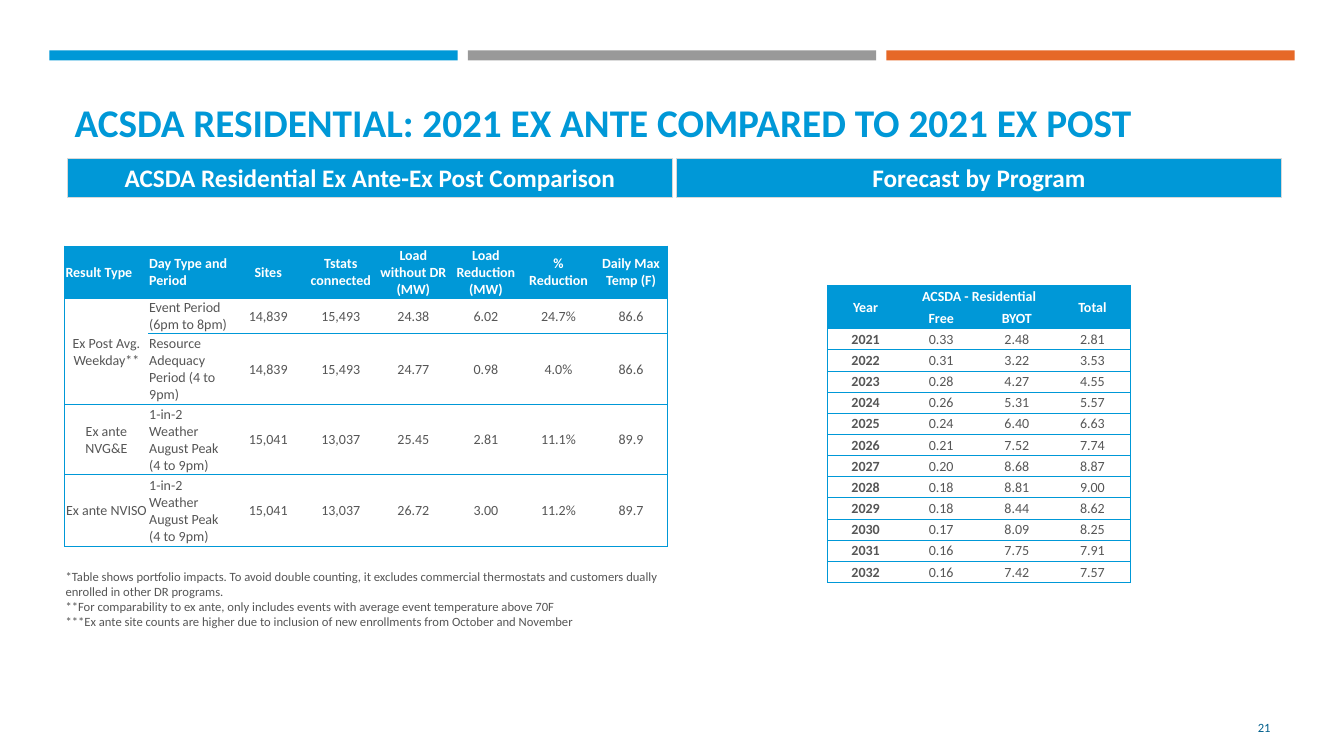
"""Build the slide comparing residential ex ante and ex post load impacts."""
from lxml import etree
from pptx import Presentation
from pptx.dml.color import RGBColor
from pptx.enum.shapes import MSO_SHAPE as SHAPE
from pptx.enum.text import MSO_ANCHOR as ANCHOR, MSO_AUTO_SIZE as AUTO, PP_ALIGN as ALIGN
from pptx.oxml.ns import qn
from pptx.util import Inches, Pt

BLUE = RGBColor(0x00, 0x98, 0xD7)
NAVY = RGBColor(0x00, 0x5F, 0x8C)
ORANGE = RGBColor(0xE6, 0x68, 0x27)
GREY = RGBColor(0x99, 0x99, 0x99)
PALE = RGBColor(0xD8, 0xD8, 0xD8)
TEXT = RGBColor(0x56, 0x56, 0x56)
WHITE = RGBColor(0xFF, 0xFF, 0xFF)
PLAIN_STYLE = "{2D5ABB26-0587-4C30-8999-92F81FD0307C}"


def write(tf, text, size, color, bold=False, align=ALIGN.CENTER):
    fmt = {"name": "Calibri", "size": Pt(size), "bold": bold}
    for i, line in enumerate(text.split("\n")):
        p = tf.add_paragraph() if i else tf.paragraphs[0]
        p.alignment = align
        p.space_before = Pt(0)
        r = p.add_run()
        r.text = line
        for key, value in fmt.items():
            setattr(r.font, key, value)
        r.font.color.rgb = color


def add_grid(left, top, widths, heights, rows, heads, left_cells, bold_cols, merges):
    frame = s.shapes.add_table(len(heights), len(widths), Inches(left), Inches(top),
                               Inches(sum(widths)), Inches(sum(heights)))
    table = frame.table
    table.first_row = table.horz_banding = False
    table._tbl.tblPr.find(qn("a:tableStyleId")).text = PLAIN_STYLE
    for col, width in zip(table.columns, widths):
        col.width = Inches(width)
    for row, height in zip(table.rows, heights):
        row.height = Inches(height)
    for i, values in enumerate(rows):
        note = len(values) == 1
        for j in range(len(widths)):
            cell = table.cell(i, j)
            cell.margin_left = cell.margin_right = cell.margin_top = Inches(0.01)
            cell.margin_bottom = 0
            cell.vertical_anchor = ANCHOR.MIDDLE
            edges = {"lnL": j == 0 and not note, "lnR": j == len(widths) - 1 and not note,
                     "lnT": True, "lnB": not note}
            for tag, shown in edges.items():
                if shown:
                    ln = etree.SubElement(cell._tc.get_or_add_tcPr(), qn(f"a:{tag}"), w="6350")
                    fill = etree.SubElement(ln, qn("a:solidFill"))
                    etree.SubElement(fill, qn("a:srgbClr"), val=str(BLUE))
            head = i < heads
            if head:
                cell.fill.solid()
                cell.fill.fore_color.rgb = BLUE
            else:
                cell.fill.background()
            flush = note or j in left_cells or (i, j) in left_cells
            write(cell.text_frame, values[j] if j < len(values) else "", 9 if note else 10,
                  WHITE if head else TEXT, head or j in bold_cols,
                  ALIGN.LEFT if flush else ALIGN.CENTER)
    for start, end in merges:
        table.cell(*start).merge(table.cell(*end))


prs = Presentation()
prs.slide_width, prs.slide_height = Inches(13.33), Inches(7.5)
s = prs.slides.add_slide(prs.slide_layouts.get_by_name("Comparison"))
title, left_head, left_body, right_head, right_body = s.placeholders
for sp in (left_body, right_body):
    sp.element.getparent().remove(sp.element)

for i, color in enumerate((BLUE, GREY, ORANGE)):
    bar = s.shapes.add_shape(SHAPE.RECTANGLE, Inches(0.49 + 4.15 * i), Inches(0.5),
                             Inches(4.05), Inches(0.1))
    bar.shadow.inherit = False
    bar.fill.solid()
    bar.fill.fore_color.rgb = color
    bar.line.fill.background()

number = s.shapes.add_textbox(0, 0, 0, 0)
boxes = (
    (title, (0.64, 0.77, 12.06, 0.71), "ACSDA RESIDENTIAL: 2021 EX ANTE COMPARED TO 2021 EX POST",
     28, BLUE, True, ALIGN.LEFT, ANCHOR.BOTTOM),
    (left_head, (0.67, 1.57, 6, 0.39), "ACSDA Residential Ex Ante-Ex Post Comparison",
     18, WHITE, True, ALIGN.CENTER, ANCHOR.MIDDLE),
    (right_head, (6.71, 1.57, 6, 0.39), "Forecast by Program",
     18, WHITE, True, ALIGN.CENTER, ANCHOR.MIDDLE),
    (number, (11.55, 7.02, 1.15, 0.4), "21", 9, NAVY, False, ALIGN.RIGHT, ANCHOR.MIDDLE),
)
for sp, box, text, size, color, bold, align, anchor in boxes:
    sp.left, sp.top, sp.width, sp.height = map(Inches, box)
    tf = sp.text_frame
    tf.word_wrap = True
    tf.auto_size = AUTO.NONE
    tf.vertical_anchor = anchor
    tf.margin_top = tf.margin_bottom = Inches(0.04)
    write(tf, text, size, color, bold, align)

for sp in (left_head, right_head):
    sp.fill.solid()
    sp.fill.fore_color.rgb = BLUE
    sp.line.color.rgb = PALE
    sp.line.width = Pt(1)

forecast = [
    ("Year", "ACSDA - Residential", "", "Total"),
    ("", "Free", "BYOT", ""),
    ("2021", "0.33", "2.48", "2.81"),
    ("2022", "0.31", "3.22", "3.53"),
    ("2023", "0.28", "4.27", "4.55"),
    ("2024", "0.26", "5.31", "5.57"),
    ("2025", "0.24", "6.40", "6.63"),
    ("2026", "0.21", "7.52", "7.74"),
    ("2027", "0.20", "8.68", "8.87"),
    ("2028", "0.18", "8.81", "9.00"),
    ("2029", "0.18", "8.44", "8.62"),
    ("2030", "0.17", "8.09", "8.25"),
    ("2031", "0.16", "7.75", "7.91"),
    ("2032", "0.16", "7.42", "7.57"),
]
add_grid(8.21, 2.83, [0.75] * 4, [0.22] + [0.21] * 13, forecast, 2, (), (0,),
         [((0, 0), (1, 0)), ((0, 1), (0, 2)), ((0, 3), (1, 3))])

notes = (
    "*Table shows portfolio impacts. To avoid double counting, it excludes commercial thermostats "
    "and customers dually enrolled in other DR programs.\n"
    "**For comparability to ex ante, only includes events with average event temperature above 70F\n"
    "***Ex ante site counts are higher due to inclusion of new enrollments from October and November"
)
peak = "1-in-2 Weather August Peak (4 to 9pm)"
comparison = [
    ("Result Type", "Day Type and Period", "Sites", "Tstats connected", "Load without DR (MW)",
     "Load Reduction (MW)", "% Reduction", "Daily Max Temp (F)"),
    ("Ex Post Avg. Weekday**", "Event Period (6pm to 8pm)", "14,839", "15,493", "24.38", "6.02",
     "24.7%", "86.6"),
    ("", "Resource Adequacy Period (4 to 9pm)", "14,839", "15,493", "24.77", "0.98", "4.0%", "86.6"),
    ("Ex ante NVG&E", peak, "15,041", "13,037", "25.45", "2.81", "11.1%", "89.9"),
    ("Ex ante NVISO", peak, "15,041", "13,037", "26.72", "3.00", "11.2%", "89.7"),
    (notes,),
]
add_grid(0.64, 2.44, [0.83] * 2 + [0.72] * 6, [0.52, 0.35, 0.7, 0.7, 0.71, 1.05], comparison, 1,
         (1, (0, 0)), (), [((1, 0), (2, 0)), ((5, 0), (5, 7))])

prs.save("out.pptx")
